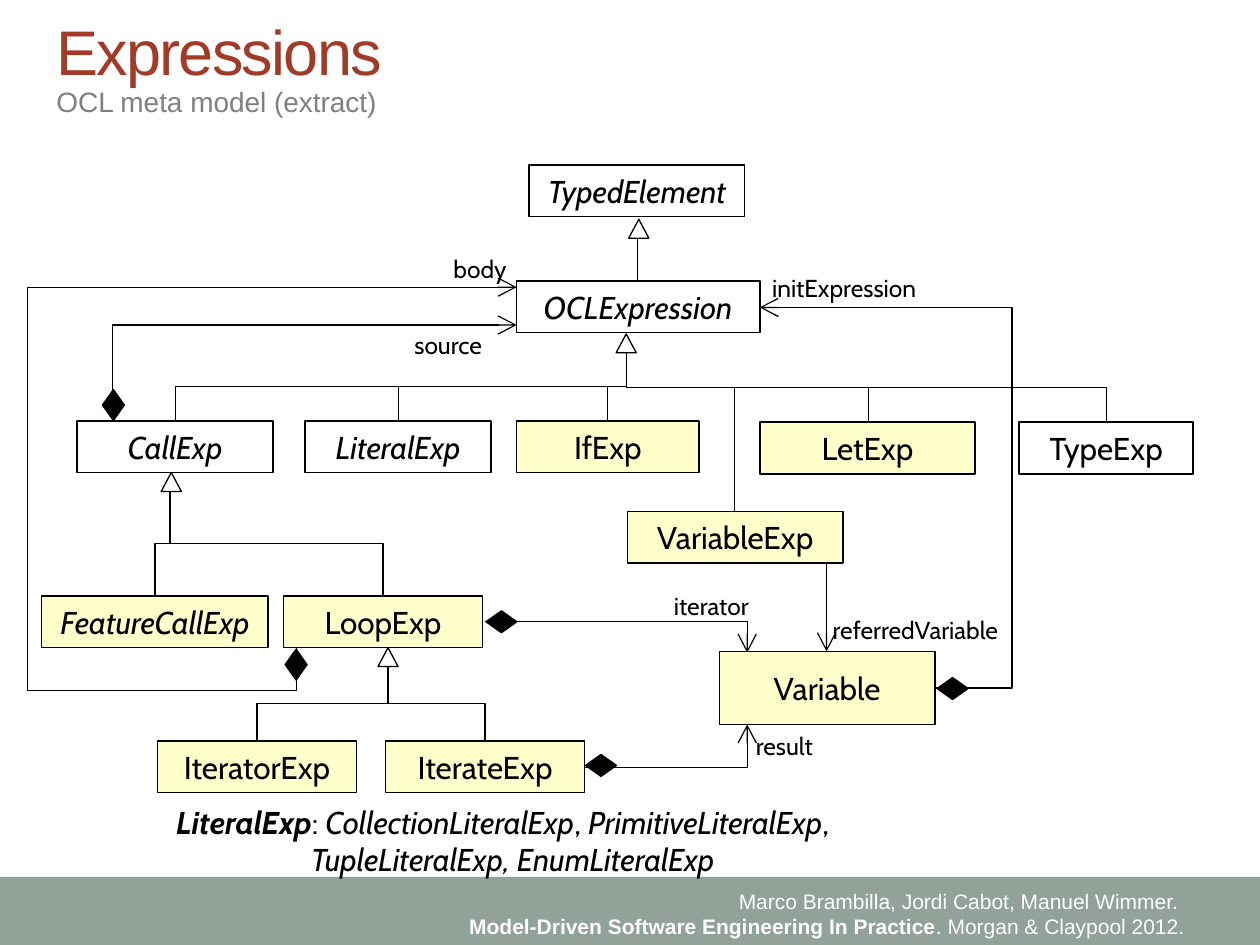
from lxml.etree import SubElement
from pptx import Presentation
from pptx.dml.color import RGBColor
from pptx.enum.shapes import MSO_CONNECTOR, MSO_SHAPE
from pptx.enum.text import MSO_ANCHOR, PP_ALIGN
from pptx.oxml.ns import qn
from pptx.util import Pt

PX = 9144  # EMU per px, 100 px to the inch
BLACK = RGBColor(0, 0, 0)
WHITE = RGBColor(255, 255, 255)
CREAM = RGBColor(0xFF, 0xFF, 0xCC)
SAGE = RGBColor(0x93, 0xA2, 0x99)
RUST = RGBColor(0xA2, 0x3A, 0x28)
GRAY = RGBColor(0x7F, 0x7F, 0x7F)
ITALIC = {"italic": True}
BOLD = {"bold": True}


def emu(*nums):
    return [round(n * PX) for n in nums]


class Diagram:
    font = "Cabin"
    thin, thick = Pt(0.75), Pt(1)

    def __init__(self, slide):
        self.slide = slide
        self.shapes = slide.shapes

    def run(self, para, words, size, color=BLACK, name=font, **form):
        run = para.add_run()
        run.text = words
        for key, val in {"size": Pt(size), "name": name, **form}.items():
            setattr(run.font, key, val)
        run.font.color.rgb = color
        return run

    def shape(self, kind, area, fill=None, line=None, turn=0):
        item = self.shapes.add_shape(kind, *emu(*area))
        item.shadow.inherit = False
        item.rotation = turn
        if fill is None:
            item.fill.background()
        else:
            item.fill.solid()
            item.fill.fore_color.rgb = fill
        if line is None:
            item.line.fill.background()
        else:
            item.line.color.rgb = BLACK
            item.line.width = line
        return item

    def box(self, words, area, fill=WHITE, **form):
        frame = self.shape(MSO_SHAPE.RECTANGLE, area, fill, self.thick).text_frame
        side, edge = emu(4, 5)
        style = {"word_wrap": True, "vertical_anchor": MSO_ANCHOR.MIDDLE,
                 "margin_left": side, "margin_right": side,
                 "margin_top": edge, "margin_bottom": edge}
        for key, val in style.items():
            setattr(frame, key, val)
        para = frame.paragraphs[0]
        para.alignment = PP_ALIGN.CENTER
        self.run(para, words, 18, **form)

    def heir(self, x, y):
        """Triangle of inheritance, with its top left corner at x, y."""
        self.shape(MSO_SHAPE.ISOSCELES_TRIANGLE, (x, y, 16, 15), line=self.thin)

    def whole(self, x, y, turn=0):
        """Diamond of composition."""
        self.shape(MSO_SHAPE.DIAMOND, (x, y, 24, 17), BLACK, self.thick, turn)

    def wire(self, start, end, kind="bentConnector3", turn=False, arrow=False, bends=()):
        """Connector; a turned one leaves its start vertically."""
        (x1, y1), (x2, y2) = start, end
        midx, midy = (x1 + x2) / 2, (y1 + y2) / 2
        wide, high = (y2 - y1, x1 - x2) if turn else (x2 - x1, y2 - y1)
        line = self.shapes.add_connector(MSO_CONNECTOR.ELBOW, *emu(
            midx - wide / 2, midy - high / 2, midx + wide / 2, midy + high / 2))
        line.line.color.rgb = BLACK
        line.line.width = self.thin
        props = line._element.spPr
        if turn:
            props.find(qn("a:xfrm")).set("rot", "5400000")
        geom = props.find(qn("a:prstGeom"))
        geom.set("prst", kind)
        for num, bend in enumerate(bends, 1):
            SubElement(geom.find(qn("a:avLst")), qn("a:gd"),
                       name=f"adj{num}", fmla=f"val {round(bend * 100000)}")
        if arrow:
            SubElement(props.find(qn("a:ln")), qn("a:tailEnd"),
                       type="arrow", w="lg", len="lg")
        SubElement(props, qn("a:effectLst"))

    def text(self, area, lines, size, align=PP_ALIGN.LEFT, anchor=MSO_ANCHOR.TOP, **form):
        """Text box; each line is a list of (words, format) pairs."""
        frame = self.shapes.add_textbox(*emu(*area)).text_frame
        frame.word_wrap = True
        frame.vertical_anchor = anchor
        for num, parts in enumerate(lines):
            para = frame.add_paragraph() if num else frame.paragraphs[0]
            para.alignment = align
            for words, extra in parts:
                self.run(para, words, size, **form, **extra)
        return frame


def main():
    deck = Presentation()
    deck.slide_width, deck.slide_height = emu(1000, 750)
    art = Diagram(deck.slides.add_slide(deck.slide_layouts[6]))

    # Footer band
    art.shape(MSO_SHAPE.RECTANGLE, (0, 696, 1000, 54), SAGE)
    art.text((294, 700, 656, 50), [
        [("Marco Brambilla, Jordi Cabot, Manuel Wimmer. ", {})],
        [("Model-Driven Software Engineering In Practice", BOLD),
         (". Morgan & Claypool 2012.", {})],
    ], 12, PP_ALIGN.RIGHT, color=WHITE, name="Arial")

    # Title and subtitle
    title = art.text((35, 17, 933, 46), [[("Expressions", {})]], 36,
                     anchor=MSO_ANCHOR.MIDDLE, color=RUST, name="Arial")
    title.paragraphs[0].runs[0].font._element.set("spc", "-100")
    art.text((35, 62, 933, 39), [[("OCL meta model (extract)", {})]], 16,
             color=GRAY, name="Arial")

    # Inheritance: triangles and trees
    for spot in [(499, 174), (489, 265), (128, 375), (300, 514)]:
        art.heir(*spot)
    art.wire((506, 189), (506, 223), "line")
    trees = [
        ((497, 280), [(139, 334), (316, 334), (482, 334), (689, 335), (878, 335)]),
        ((135, 390), [(123, 473), (304, 473)]),
        ((308, 529), [(204, 588), (385, 588)]),
    ]
    for root, leaves in trees:
        for leaf in leaves:
            art.wire(root, leaf, turn=True)
    art.wire((497, 280), (583, 406), turn=True, bends=[0.22])

    # Associations
    art.wire((742, 546), (603, 244), arrow=True, bends=[-0.44])
    art.wire((89, 335), (410, 258), "bentConnector2", turn=True, arrow=True)
    art.wire((385, 493), (593, 518), "bentConnector2", arrow=True)
    art.wire((464, 609), (593, 575), "bentConnector2", arrow=True)
    art.wire((656, 446), (656, 517), "line", arrow=True)
    art.wire((235, 514), (410, 228), "bentConnector4", turn=True, arrow=True,
             bends=[-0.12, -1.22])
    for spot in [(223, 519, 90), (78, 313, 90), (386, 485), (465, 599), (744, 538)]:
        art.whole(*spot)

    # Role names
    roles = [
        ("initExpression", 603, 212, 143), ("source", 319, 257, 99),
        ("body", 350, 197, 82), ("result", 590, 575, 76),
        ("iterator", 525, 464, 85), ("referredVariable", 651, 483, 169),
    ]
    for words, x, y, wide in roles:
        art.text((x, y, wide, 33), [[(words, {})]], 14)

    # Classes: abstract ones in italics
    for words, x, y, wide, fill, form in [
        ("TypedElement", 420, 131, 171, WHITE, ITALIC),
        ("OCLExpression", 410, 223, 193, WHITE, ITALIC),
        ("CallExp", 61, 334, 156, WHITE, ITALIC),
        ("LiteralExp", 242, 334, 148, WHITE, ITALIC),
        ("IfExp", 410, 334, 145, CREAM, {}),
        ("LetExp", 603, 335, 171, CREAM, {}),
        ("TypeExp", 809, 335, 138, WHITE, {}),
        ("VariableExp", 498, 406, 171, CREAM, {}),
        ("FeatureCallExp", 33, 473, 180, CREAM, ITALIC),
        ("LoopExp", 225, 473, 158, CREAM, {}),
        ("IteratorExp", 125, 588, 158, CREAM, {}),
        ("IterateExp", 306, 588, 158, CREAM, {}),
    ]:
        art.box(words, (x, y, wide, 41), fill, **form)
    art.box("Variable", (571, 517, 171, 58), CREAM)

    # Kinds of literal
    note = art.text((130, 632, 640, 71), [
        [("LiteralExp", BOLD | ITALIC), (": ", {}),
         ("CollectionLiteralExp", ITALIC), (", ", {}),
         ("PrimitiveLiteralExp", ITALIC), (",", {})],
        [("TupleLiteralExp, EnumLiteralExp", ITALIC)],
    ], 18)
    note.paragraphs[1]._p.get_or_add_pPr().set("marL", str(107 * PX))

    deck.save("out.pptx")


if __name__ == "__main__":
    main()
